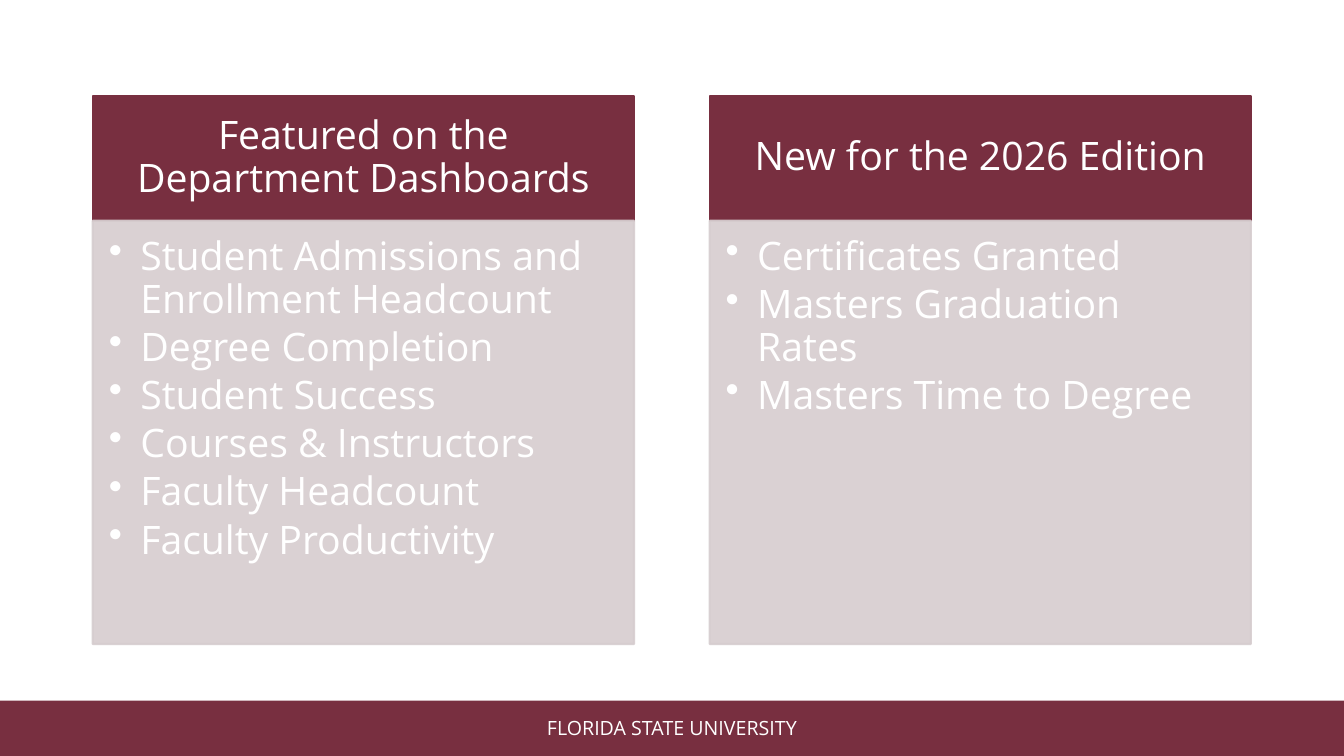
from lxml.etree import SubElement
from pptx import Presentation
from pptx.dml.color import RGBColor
from pptx.enum.shapes import MSO_SHAPE as Shape
from pptx.enum.text import MSO_ANCHOR as Anchor, PP_ALIGN as Align
from pptx.oxml.ns import qn
from pptx.util import Pt

GARNET = RGBColor(0x78, 0x2F, 0x40)
ROSE_GREY = RGBColor(0xD6, 0xCD, 0xCF)
WHITE = RGBColor(0xFF, 0xFF, 0xFF)

CARD_LEFT, CARD_STEP, CARD_WIDTH = 66.24, 440.64, 386.64
HEADER_TOP, HEADER_HEIGHT, BODY_HEIGHT = 68.4, 89.28, 302.4
CARDS = [
    ("Featured on the Department Dashboards", [
        "Student Admissions and Enrollment Headcount",
        "Degree Completion",
        "Student Success",
        "Courses & Instructors",
        "Faculty Headcount",
        "Faculty Productivity",
    ]),
    ("New for the 2026 Edition", [
        "Certificates Granted",
        "Masters Graduation Rates",
        "Masters Time to Degree",
    ]),
]


def add_panel(left, top, width, height, color, margins=(0, 0, 0, 0), anchor=Anchor.TOP):
    """Add a filled rectangle; margins run left, top, right, bottom."""
    panel = page.shapes.add_shape(Shape.RECTANGLE, Pt(left), Pt(top), Pt(width), Pt(height))
    panel.shadow.inherit = False
    panel.fill.solid()
    panel.fill.fore_color.rgb = color
    panel.line.color.rgb = color
    panel.line.width = Pt(1.5)
    frame = panel.text_frame
    frame.word_wrap = True
    frame.vertical_anchor = anchor
    frame.margin_left, frame.margin_top, frame.margin_right, frame.margin_bottom = map(Pt, margins)
    return panel


def add_span(para, text, size):
    span = para.add_run()
    span.text = text
    span.font.name = "Open Sans"
    span.font.size = Pt(size)
    span.font.color.rgb = WHITE


deck = Presentation()
deck.slide_width, deck.slide_height = Pt(960), Pt(540)
page = deck.slides.add_slide(deck.slide_layouts[6])

band = add_panel(0, 500.4, 960, 39.6, GARNET)
band.line.fill.background()
footer = page.shapes.add_textbox(Pt(353.5), Pt(507.6), Pt(253), Pt(24.5)).text_frame
footer.word_wrap = True
footer.paragraphs[0].alignment = Align.CENTER
add_span(footer.paragraphs[0], "FLORIDA STATE UNIVERSITY", 14)

for column, (title, topics) in enumerate(CARDS):
    left = CARD_LEFT + column * CARD_STEP
    header = add_panel(left, HEADER_TOP, CARD_WIDTH, HEADER_HEIGHT, GARNET,
                       (15.84, 8.64, 15.84, 8.64), Anchor.MIDDLE)
    para = header.text_frame.paragraphs[0]
    para.alignment = Align.CENTER
    para.line_spacing = 0.9
    para.space_after = Pt(9.8)
    add_span(para, title, 28)

    body = add_panel(left, HEADER_TOP + HEADER_HEIGHT, CARD_WIDTH, BODY_HEIGHT, ROSE_GREY,
                     (11.52, 11.52, 15.84, 17.28))
    for color in body._element.spPr.iter(qn("a:srgbClr")):
        SubElement(color, qn("a:alpha"), val="90000")
    for index, topic in enumerate(topics):
        frame = body.text_frame
        para = frame.add_paragraph() if index else frame.paragraphs[0]
        para.alignment = Align.LEFT
        para.level = 1
        para.line_spacing = 0.9
        para.space_after = Pt(4.2)
        props = para._p.get_or_add_pPr()
        props.set("marL", str(Pt(22.5)))
        props.set("indent", str(Pt(-22.5)))
        SubElement(props, qn("a:buChar"), char="•")
        add_span(para, topic, 28)

deck.save("out.pptx")
